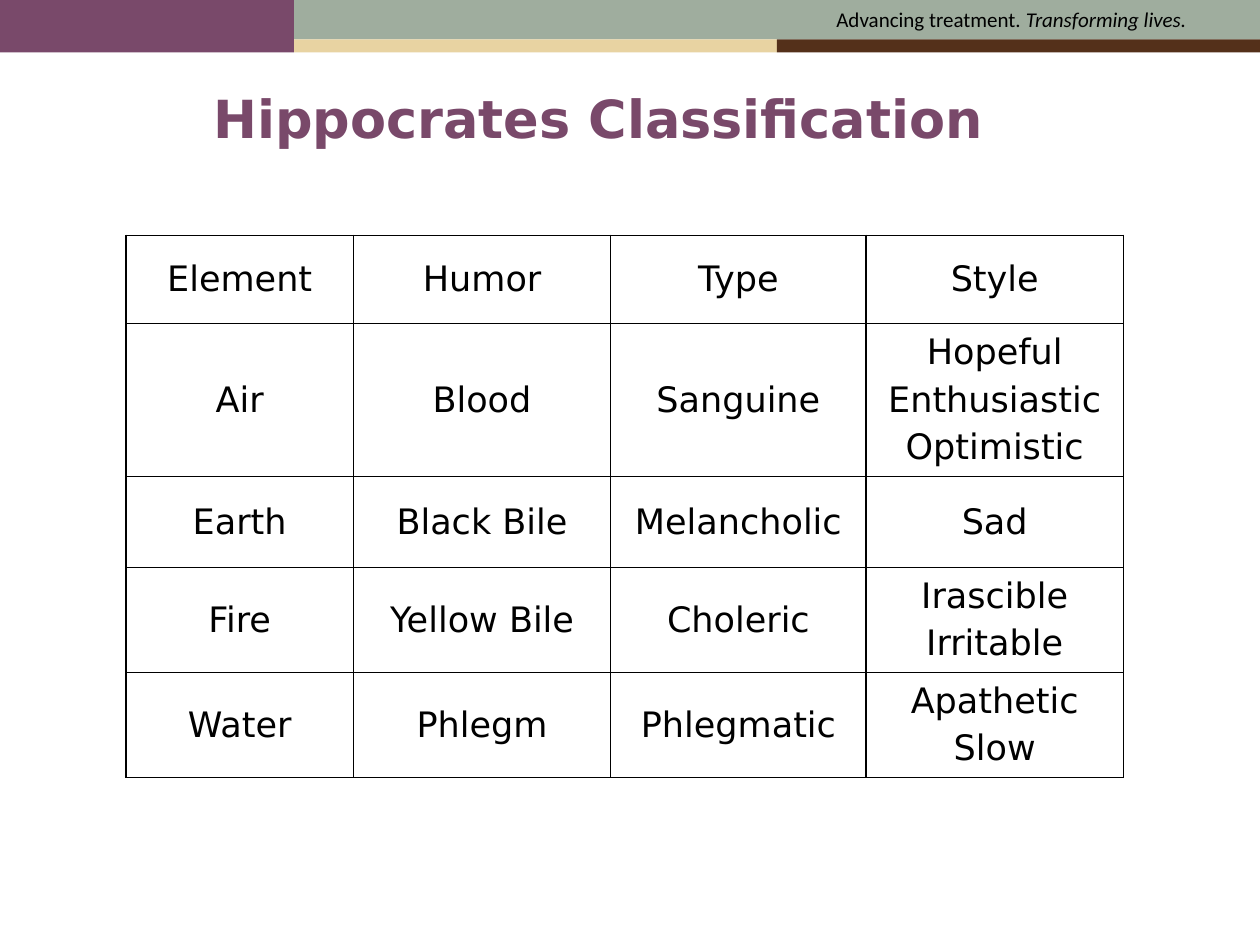
import pptx
import pptx.dml.color
import pptx.enum.shapes
import pptx.enum.text
import pptx.oxml
import pptx.oxml.ns
import pptx.util

Pt = pptx.util.Pt
ALIGN = pptx.enum.text.PP_ALIGN
MIDDLE = pptx.enum.text.MSO_ANCHOR.MIDDLE
PLUM = "79496A"
BLACK = "000000"
ROWS = [
    ["Element", "Humor", "Type", "Style"],
    ["Air", "Blood", "Sanguine", "Hopeful\nEnthusiastic\nOptimistic"],
    ["Earth", "Black Bile", "Melancholic", "Sad"],
    ["Fire", "Yellow Bile", "Choleric", "Irascible\nIrritable"],
    ["Water", "Phlegm", "Phlegmatic", "Apathetic\nSlow"],
]
WIDTHS = [130, 147, 146, 147]
HEIGHTS = [50.5, 75, 52, 60, 60]


def color(code):
    return pptx.dml.color.RGBColor.from_string(code)


def style(para, name, size, code, align, bold=False):
    para.alignment = align
    font = para.font
    font.name, font.size, font.bold = name, Pt(size), bold
    font.color.rgb = color(code)


def add_band(slide, left, top, width, height, code):
    kind = pptx.enum.shapes.MSO_SHAPE.RECTANGLE
    band = slide.shapes.add_shape(kind, Pt(left), Pt(top), Pt(width), Pt(height))
    band.shadow.inherit = False
    band.fill.solid()
    band.fill.fore_color.rgb = color(code)
    band.line.fill.background()


def add_header(slide, left, top, width, height):
    side, thin = 168, 7.5
    start, rest = left + side, width - side
    tall, half = height - thin, rest / 2
    add_band(slide, left, top, side, height, PLUM)
    add_band(slide, start, top, rest, tall, "9FAD9E")
    add_band(slide, start, top + tall, half, thin, "E8D3A2")
    add_band(slide, start + half, top + tall, half, thin, "54301A")

    box = slide.shapes.add_textbox(Pt(start + 6), Pt(top), Pt(rest - 41), Pt(22))
    box.text_frame.word_wrap = True
    para = box.text_frame.paragraphs[0]
    para.add_run().text = "Advancing treatment. "
    motto = para.add_run()
    motto.text = "Transforming lives."
    motto.font.italic = True
    style(para, "Calibri", 12, BLACK, ALIGN.RIGHT)


def add_title(slide, left, top, width, height):
    title = slide.shapes.title
    title.left, title.top = Pt(left), Pt(top)
    title.width, title.height = Pt(width), Pt(height)
    frame = title.text_frame
    frame.text = "Hippocrates Classification"
    frame.vertical_anchor = MIDDLE
    style(frame.paragraphs[0], "DejaVu Sans", 30, PLUM, ALIGN.CENTER, True)


def add_border(cell):
    props = cell._tc.get_or_add_tcPr()
    for side in "LRTB":
        props.append(pptx.oxml.parse_xml(
            f'<a:ln{side} {pptx.oxml.ns.nsdecls("a")} w="{Pt(1)}"><a:solidFill>'
            f'<a:srgbClr val="{BLACK}"/></a:solidFill></a:ln{side}>'))


def fill_cell(cell, text):
    add_border(cell)
    cell.fill.background()
    cell.vertical_anchor = MIDDLE
    cell.text = text
    for index, para in enumerate(cell.text_frame.paragraphs):
        style(para, "DejaVu Sans", 20, BLACK, ALIGN.CENTER)
        if index:
            para.space_before = Pt(4)


def add_grid(slide, left, top):
    frame = slide.shapes.add_table(
        len(ROWS), len(WIDTHS), Pt(left), Pt(top), Pt(sum(WIDTHS)), Pt(sum(HEIGHTS)))
    table = frame.table
    table.first_row = table.horz_banding = False
    for column, width in zip(table.columns, WIDTHS):
        column.width = Pt(width)
    for row, height, texts in zip(table.rows, HEIGHTS, ROWS):
        row.height = Pt(height)
        for cell, text in zip(row.cells, texts):
            fill_cell(cell, text)


def main():
    deck = pptx.Presentation()
    deck.slide_width, deck.slide_height = Pt(720), Pt(540)
    slide = deck.slides.add_slide(deck.slide_layouts[5])
    add_header(slide, 0, 0, 720, 30)
    add_title(slide, 48, 48, 588, 38)
    add_grid(slide, 72, 134.5)
    deck.save("out.pptx")


if __name__ == "__main__":
    main()
